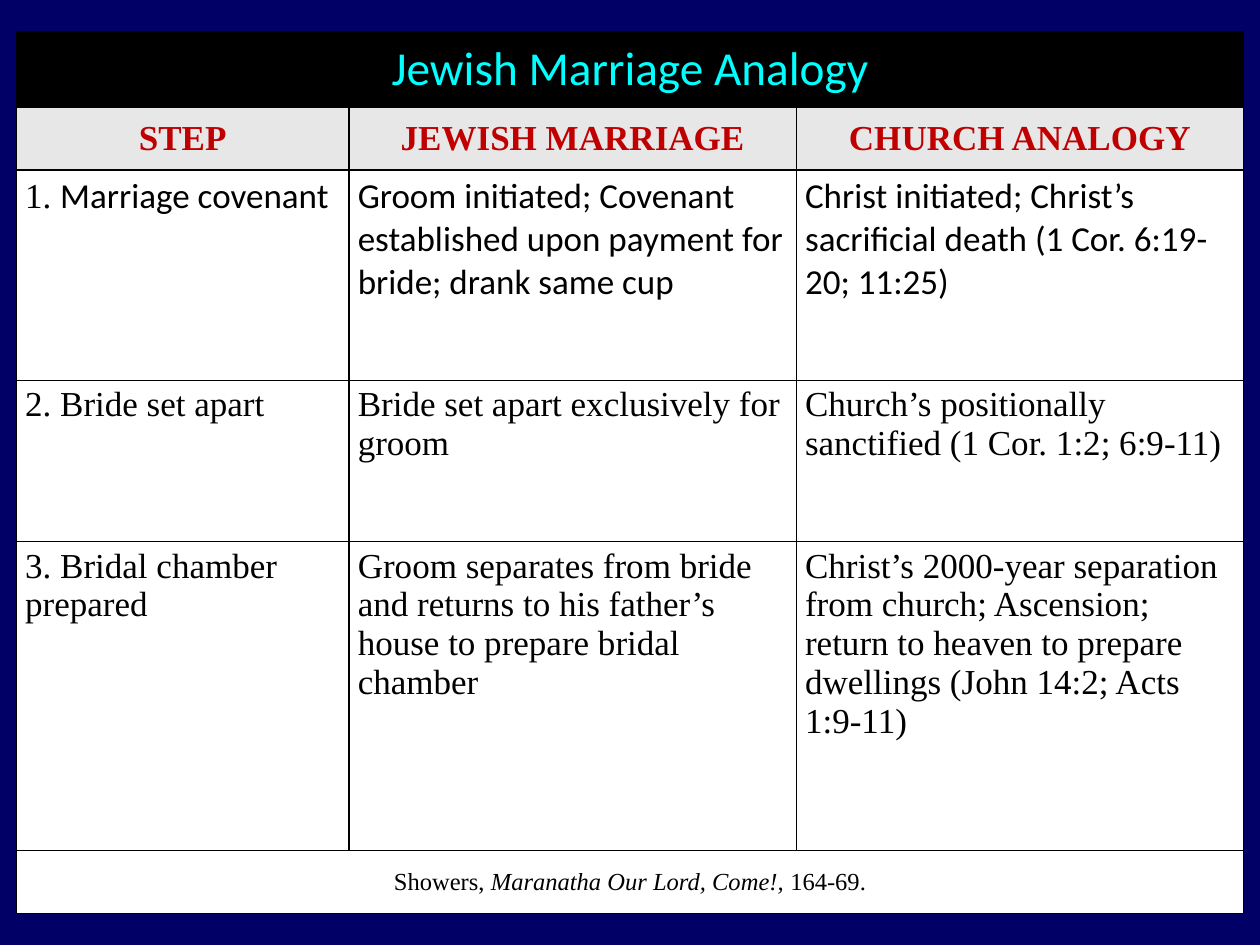
import pptx
import pptx.dml.color
import pptx.enum.text
import pptx.oxml
import pptx.oxml.ns
import pptx.util

Inches = pptx.util.Inches
SERIF = "Times New Roman"
SANS = "Calibri"

COLUMN_WIDTHS = [2.64, 3.55, 3.55]
ROW_HEIGHTS = [0.6, 0.5, 1.67, 1.28, 2.45, 0.5]
HEADINGS = ["STEP", "JEWISH MARRIAGE", "CHURCH ANALOGY"]
STEPS = [
    (SANS, [
        "Marriage covenant",
        "Groom initiated; Covenant established upon payment for bride; drank same cup",
        "Christ initiated; Christ’s sacrificial death (1 Cor. 6:19-20; 11:25)",
    ]),
    (SERIF, [
        "Bride set apart",
        "Bride set apart exclusively for groom",
        "Church’s positionally sanctified (1 Cor. 1:2; 6:9-11)",
    ]),
    (SERIF, [
        "Bridal chamber prepared",
        "Groom separates from bride and returns to his father’s house to prepare bridal chamber",
        "Christ’s 2000-year separation from church; Ascension; return to heaven "
        "to prepare dwellings (John 14:2; Acts 1:9-11)",
    ]),
]


def color(value):
    return pptx.dml.color.RGBColor.from_string(value)


class SlideBuilder:
    border_color = "000000"
    border_width = pptx.util.Pt(1)

    def __init__(self, slide):
        self.slide = slide

    def background(self, fill):
        self.slide.background.fill.solid()
        self.slide.background.fill.fore_color.rgb = color(fill)

    def table(self, left, top, widths, heights):
        shape = self.slide.shapes.add_table(
            len(heights), len(widths), Inches(left), Inches(top),
            Inches(sum(widths)), Inches(sum(heights)))
        table = shape.table
        for column, width in zip(table.columns, widths):
            column.width = Inches(width)
        for row, height in zip(table.rows, heights):
            row.height = Inches(height)
        return table

    def borders(self, cell):
        properties = cell._tc.get_or_add_tcPr()
        for position, side in enumerate(["lnL", "lnR", "lnT", "lnB"]):
            line = pptx.oxml.parse_xml(
                f'<a:{side} {pptx.oxml.ns.nsdecls("a")} w="{self.border_width}">'
                f'<a:solidFill><a:srgbClr val="{self.border_color}"/></a:solidFill>'
                f'</a:{side}>')
            properties.insert(position, line)

    def cell(self, cell, runs, size=20, text_color="000000", fill="FFFFFF",
             bold=False, centered=False):
        cell.fill.solid()
        cell.fill.fore_color.rgb = color(fill)
        cell.margin_left = cell.margin_right = Inches(0.07)
        cell.margin_top = cell.margin_bottom = Inches(0.04)
        self.borders(cell)
        paragraph = cell.text_frame.paragraphs[0]
        if centered:
            cell.vertical_anchor = pptx.enum.text.MSO_ANCHOR.MIDDLE
            paragraph.alignment = pptx.enum.text.PP_ALIGN.CENTER
        for text, font_name, italic in runs:
            run = paragraph.add_run()
            run.text = text
            run.font.name = font_name
            run.font.size = pptx.util.Pt(size)
            run.font.bold = bold
            run.font.italic = italic
            run.font.color.rgb = color(text_color)

    def full_row(self, table, row, runs, **style):
        cells = list(table.rows[row].cells)
        cells[0].merge(cells[-1])
        self.cell(cells[0], runs, centered=True, **style)
        for spanned in cells[1:]:
            self.cell(spanned, [], **style)


def main():
    presentation = pptx.Presentation()
    presentation.slide_width = Inches(10)
    presentation.slide_height = Inches(7.5)
    slide = presentation.slides.add_slide(presentation.slide_layouts[6])
    builder = SlideBuilder(slide)
    builder.background("000066")
    table = builder.table(0.13, 0.25, COLUMN_WIDTHS, ROW_HEIGHTS)

    builder.full_row(table, 0, [("Jewish Marriage Analogy", SANS, False)],
                     size=27, text_color="00FFFF", fill="000000")
    for column, heading in enumerate(HEADINGS):
        builder.cell(table.cell(1, column), [(heading, SERIF, False)],
                     text_color="C00000", fill="E7E7E7", bold=True, centered=True)
    for number, (font_name, texts) in enumerate(STEPS, start=1):
        for column, text in enumerate(texts):
            runs = [(text, font_name, False)]
            if column == 0:
                runs.insert(0, (f"{number}. ", SERIF, False))
            builder.cell(table.cell(number + 1, column), runs)
    builder.full_row(table, len(ROW_HEIGHTS) - 1, [
        ("Showers, ", SERIF, False),
        ("Maranatha Our Lord, Come!, ", SERIF, True),
        ("164-69.", SERIF, False),
    ], size=14)

    presentation.save("out.pptx")


if __name__ == "__main__":
    main()
